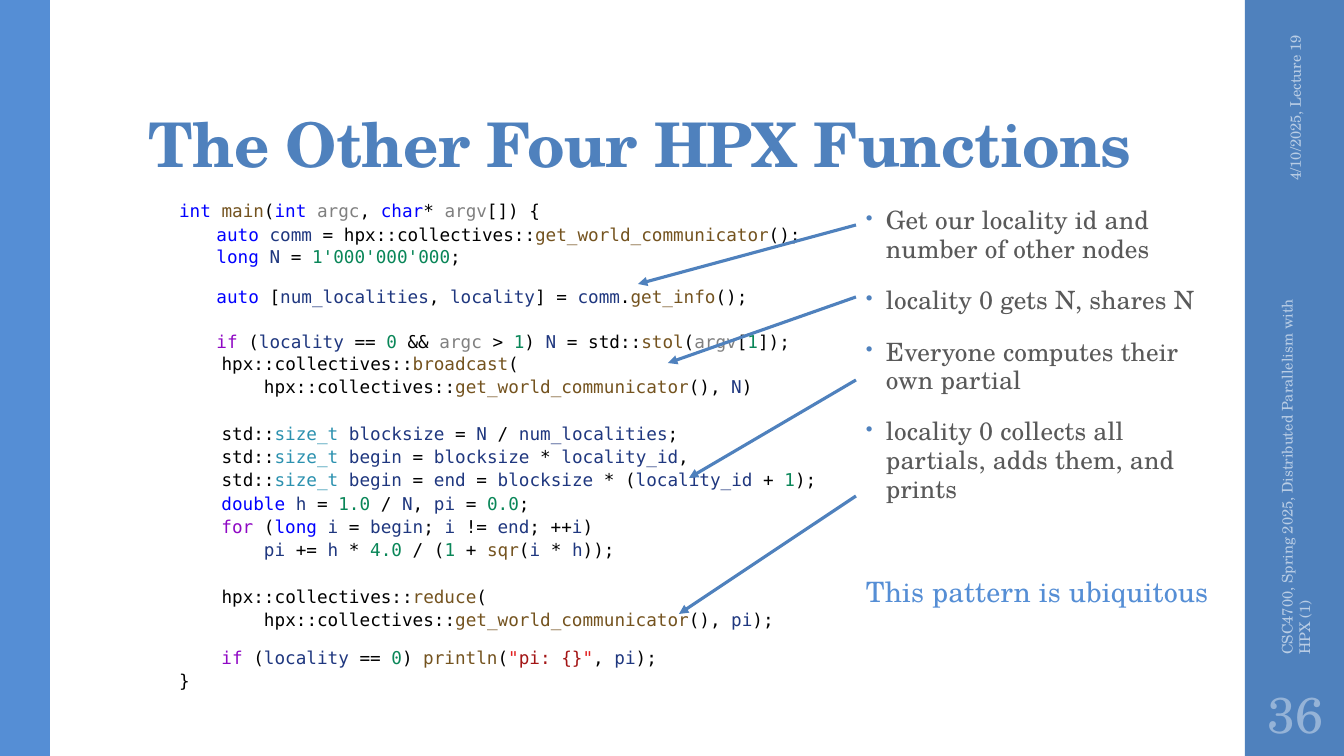
from itertools import groupby

from lxml import etree
from pptx import Presentation
from pptx import util as u
from pptx.dml.color import RGBColor
from pptx.enum import shapes, text
from pptx.oxml import ns

PX = 914400 / 100.8
SERIF, MONO = "TeX Gyre Schola", "DejaVu Sans Mono"
COLOURS = {
    "bar": "4F81BD", "edge": "558ED5", "body": "595959",
    "footer": "B9CDE5", "number": "95B3D7",
    "plain": "000000", "keyword": "0000FF", "control": "8F08C4",
    "function": "74531F", "parameter": "808080", "variable": "1F377F",
    "type": "2B91AF", "literal": "098658", "quote": "E21F1F", "string": "A31515",
}
WORDS = {
    "keyword": "int char auto long double",
    "control": "if for",
    "function": "main get_world_communicator get_info stol broadcast reduce sqr println",
    "parameter": "argc argv",
    "variable": "comm N num_localities locality locality_id blocksize begin end h i pi",
    "type": "size_t",
}
KIND = {word: kind for kind, words in WORDS.items() for word in words.split()}

# indent, space before, code
CODE = [
    (30, 0, "int main(int argc, char* argv[]) {"),
    (25, 2, "    auto comm = hpx::collectives::get_world_communicator();"),
    (25, 0, "    long N = 1'000'000'000;"),
    (25, 18, "    auto [num_localities, locality] = comm.get_info();"),
    (25, 23, "    if (locality == 0 && argc > 1) N = std::stol(argv[1]);"),
    (30, 0, "    hpx::collectives::broadcast("),
    (30, 1, "        hpx::collectives::get_world_communicator(), N)"),
    (30, 25, "    std::size_t blocksize = N / num_localities;"),
    (30, 1, "    std::size_t begin = blocksize * locality_id,"),
    (30, 1, "    std::size_t begin = end = blocksize * (locality_id + 1);"),
    (30, 2, "    double h = 1.0 / N, pi = 0.0;"),
    (30, 1, "    for (long i = begin; i != end; ++i)"),
    (30, 1, "        pi += h * 4.0 / (1 + sqr(i * h));"),
    (30, 25, "    hpx::collectives::reduce("),
    (30, 1, "        hpx::collectives::get_world_communicator(), pi);"),
    (30, 16, '    if (locality == 0) println("pi: {}", pi);'),
    (30, 1, "}"),
]
NOTES = [
    "Get our locality id and number of other nodes",
    "locality 0 gets N, shares N",
    "Everyone computes their own partial",
    "locality 0 collects all partials, adds them, and prints",
]
# arrow tip beside the code, then the height of its start beside the notes
ARROWS = [(638, 284, 225), (668, 363, 297), (689, 478, 380), (679, 614, 496)]


def px(length):
    return u.Emu(round(length * PX))


def rgb(name):
    return RGBColor.from_string(COLOURS[name])


def add_frame(slide, box, insets=(10, 5, 10, 5), anchor=text.MSO_ANCHOR.TOP):
    """Add a wrapping text box and return it with its text frame."""
    holder = slide.shapes.add_textbox(*map(px, box))
    frame = holder.text_frame
    frame.word_wrap = True
    frame.vertical_anchor = anchor
    (frame.margin_left, frame.margin_top,
     frame.margin_right, frame.margin_bottom) = map(px, insets)
    return holder, frame


def add_run(paragraph, wording, size, colour, face=SERIF, bold=False, tracking=0):
    """Add one run; tracking is in hundredths of a point."""
    run = paragraph.add_run()
    run.text = wording
    font = run.font
    font.size, font.name, font.bold = u.Pt(size), face, bold
    font.color.rgb = rgb(colour)
    if tracking:
        font._element.set("spc", str(tracking))


def paragraphs(frame):
    """Yield the first paragraph of a frame, then new ones."""
    yield frame.paragraphs[0]
    while True:
        yield frame.add_paragraph()


def add_bar(slide, box, colour):
    bar = slide.shapes.add_shape(shapes.MSO_SHAPE.RECTANGLE, *map(px, box))
    bar.shadow.inherit = False
    bar.fill.solid()
    bar.fill.fore_color.rgb = rgb(colour)
    bar.line.fill.background()


def add_title(slide, box):
    _, frame = add_frame(slide, box, (10, 3, 10, 5), text.MSO_ANCHOR.BOTTOM)
    heading = frame.paragraphs[0]
    heading.line_spacing = 0.9
    add_run(heading, "The Other Four HPX Functions", 44, "bar", bold=True, tracking=-50)


def tokens(line):
    """Yield the pieces of a code line with the name of their colour."""
    for part, quoted in enumerate(line.split('"')):
        if part:
            yield '"', "quote"
        if part % 2:
            yield quoted, "string"
            continue

        def in_word(at):
            return (quoted[at].isalnum() or quoted[at] in "_'"
                    or quoted[at] == "." and quoted[at + 1].isdigit())

        for _, places in groupby(range(len(quoted)), in_word):
            piece = "".join(quoted[at] for at in places)
            yield piece, "literal" if piece[0].isdigit() else KIND.get(piece, "plain")


def add_code(slide, box):
    _, frame = add_frame(slide, box, (0, 0, 0, 0))
    for paragraph, (indent, before, line) in zip(paragraphs(frame), CODE):
        paragraph._p.get_or_add_pPr().set("marL", str(px(indent)))
        paragraph.line_spacing = px(22)
        paragraph.space_before = px(before)
        for piece, colour in tokens(line):
            add_run(paragraph, piece, 12.6, colour, MONO)


def add_bullet(paragraph):
    properties = paragraph._p.get_or_add_pPr()
    properties.set("marL", str(px(20)))
    properties.set("indent", str(px(-20)))
    colour = etree.SubElement(properties, ns.qn("a:buClr"))
    etree.SubElement(colour, ns.qn("a:srgbClr"), val=COLOURS["bar"])
    etree.SubElement(properties, ns.qn("a:buSzPct"), val="80000")
    etree.SubElement(properties, ns.qn("a:buChar"), char="•")


def add_notes(slide, box):
    _, frame = add_frame(slide, box)
    for index, note in enumerate(NOTES):
        paragraph = frame.add_paragraph() if index else frame.paragraphs[0]
        add_bullet(paragraph)
        paragraph.line_spacing = 0.95
        paragraph.space_before = u.Pt(14 if index else 0)
        paragraph.space_after = u.Pt(2)
        add_run(paragraph, note, 18, "body", tracking=10)
    moral = frame.add_paragraph()
    moral.line_spacing = 0.95
    moral.space_before = u.Pt(50)
    add_run(moral, "This pattern is ubiquitous", 20, "edge", tracking=10)


def add_arrows(slide, start):
    """Point from the left edge of the notes to the code."""
    for tip_x, tip_y, start_y in ARROWS:
        arrow = slide.shapes.add_connector(
            shapes.MSO_CONNECTOR.STRAIGHT, *map(px, (tip_x, tip_y, start, start_y)))
        arrow.line.color.rgb = rgb("bar")
        arrow.line.width = u.Pt(2.25)
        etree.SubElement(arrow.line._get_or_add_ln(), ns.qn("a:headEnd"), type="triangle")
        etree.SubElement(arrow._element.spPr, ns.qn("a:effectLst"))


def add_sidebar(slide, left, width):
    add_bar(slide, (left, 0, width, 756), "bar")
    align = text.PP_ALIGN
    labels = [
        ((left - 55, 110, 210, 40), 270, align.RIGHT, 10.5, "footer", "4/10/2025, Lecture 19"),
        ((left - 147, 447, 395, 40), 270, align.LEFT, 10.5, "footer",
         "CSC4700, Spring 2025, Distributed Parallelism with HPX (1)"),
        ((left, 680, 101, 66), 0, align.CENTER, 36, "number", "36"),
    ]
    for box, turn, alignment, size, colour, wording in labels:
        side = 10 if turn else 5
        holder, frame = add_frame(slide, box, (side, 5, side, 5), text.MSO_ANCHOR.MIDDLE)
        holder.rotation = turn
        frame.paragraphs[0].alignment = alignment
        add_run(frame.paragraphs[0], wording, size, colour)


def main():
    deck = Presentation()
    deck.slide_width, deck.slide_height = px(1344), px(756)
    slide = deck.slides.add_slide(deck.slide_layouts[6])
    add_bar(slide, (0, 0, 50, 756), "edge")
    add_sidebar(slide, 1245, 99)
    add_title(slide, (139, 32, 1068, 154))
    add_code(slide, (149, 199, 690, 540))
    add_notes(slide, (856, 202, 371, 480))
    add_arrows(slide, 856)
    deck.save("out.pptx")


if __name__ == "__main__":
    main()
